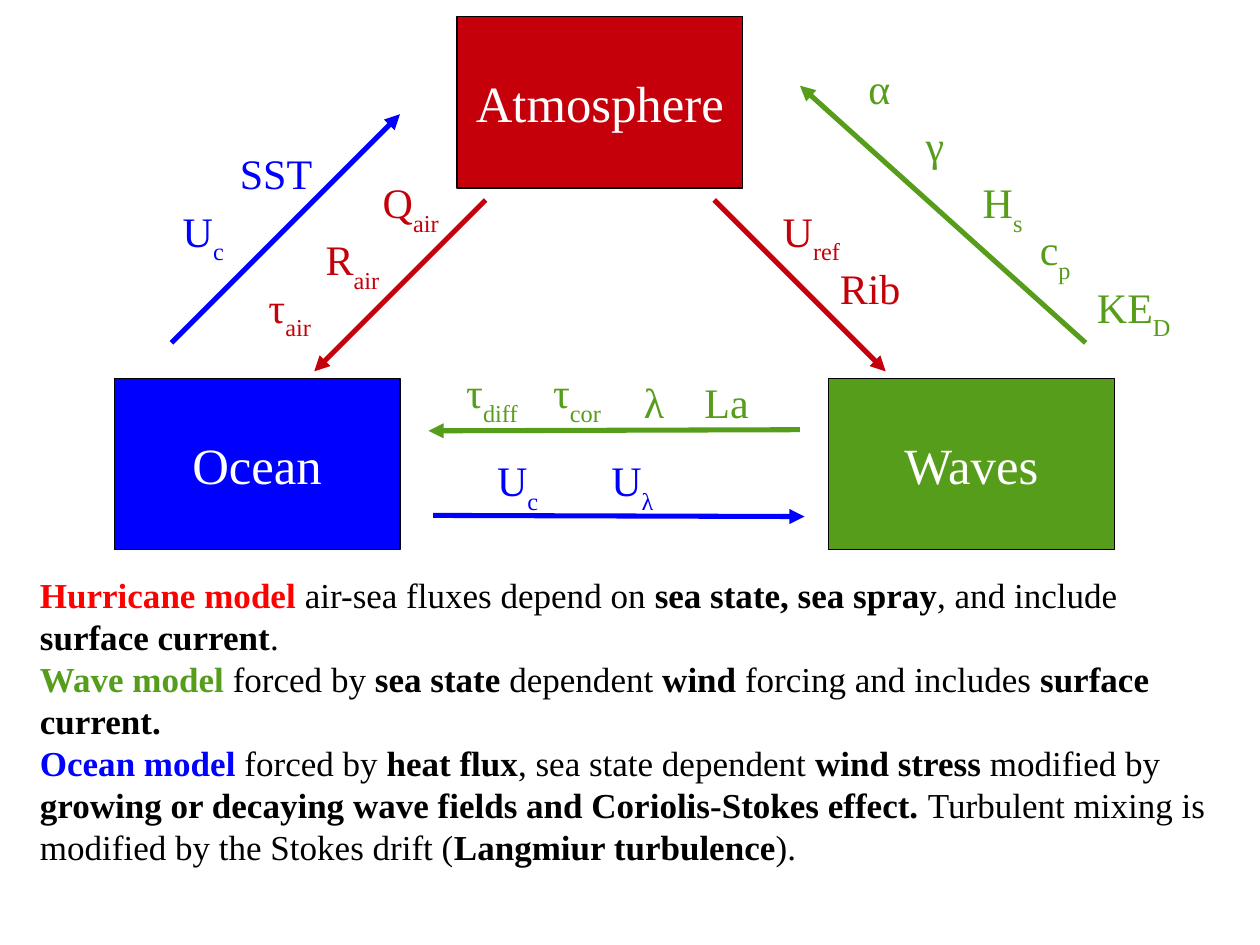
from lxml.etree import SubElement
from pptx import Presentation
from pptx.dml.color import RGBColor
from pptx.enum.shapes import MSO_CONNECTOR as Connector, MSO_SHAPE as Shape
from pptx.enum.text import MSO_ANCHOR as Anchor, PP_ALIGN as Align
from pptx.oxml.ns import qn
from pptx.util import Inches, Pt

UNIT = Inches(9.07) / 20
FONT = "Times New Roman"
BLACK = RGBColor(0x00, 0x00, 0x00)
WHITE = RGBColor(0xFF, 0xFF, 0xFF)
BRIGHT_RED = RGBColor(0xFF, 0x00, 0x00)
RED = RGBColor(0xC5, 0x00, 0x0B)
BLUE = RGBColor(0x00, 0x00, 0xFF)
GREEN = RGBColor(0x57, 0x9D, 0x1C)

MODELS = [
    ("Atmosphere", RED, (8, 0.29, 5, 3)),
    ("Ocean", BLUE, (2, 6.62, 5, 3)),
    ("Waves", GREEN, (14.5, 6.62, 5, 3)),
]

# Box in grid units, arrow ends as shares of the box, labels as (text, subscript, column, row).
EXCHANGES = [
    (BLUE, (3, 2, 4, 4), (0, 1), (1, 0),
     [("SST", "", 1, 0.5), ("U", "c", 0, 1.5)]),
    (RED, (5.5, 3.5, 3, 3), (1, 0), (0, 1),
     [("Q", "air", 1, -0.5), ("R", "air", 0, 0.5), ("τ", "air", -1, 1.33)]),
    (RED, (12.5, 3.5, 3, 3), (0, 0), (1, 1),
     [("U", "ref", 1, 0), ("Rib", "", 2, 1)]),
    (GREEN, (14, 1.5, 5, 4.5), (1, 1), (0, 0),
     [("α", "", 1, -0.5), ("γ", "", 2, 0.5), ("H", "s", 3, 1.5),
      ("c", "p", 4, 2.33), ("KE", "D", 5, 3.33)]),
    (GREEN, (7.5, 7.52, 6.5, 0.02), (1, 0), (0, 1),
     [("τ", "diff", 0.46, -1.19), ("τ", "cor", 1.98, -1.19),
      ("λ", "", 3.57, -1.02), ("La", "", 4.63, -1.02)]),
    (BLUE, (7.58, 9.02, 6.5, 0.02), (0, 0), (1, 1),
     [("U", "c", 0.92, -1.15), ("U", "λ", 2.92, -1.15)]),
]

SUMMARY = [
    ("Hurricane model ", BRIGHT_RED,
     [("air-sea fluxes depend on ", False), ("sea state, sea spray", True),
      (", and include ", False), ("surface current", True), (".", False)]),
    ("Wave model ", GREEN,
     [("forced by ", False), ("sea state", True), (" dependent ", False),
      ("wind", True), (" forcing and includes ", False),
      ("surface current.", True)]),
    ("Ocean model ", BLUE,
     [("forced by ", False), ("heat flux", True),
      (", sea state dependent ", False), ("wind stress", True),
      (" modified by ", False),
      ("growing or decaying wave fields and Coriolis-Stokes effect. ", True),
      ("Turbulent mixing is modified by the Stokes drift (", False),
      ("Langmiur turbulence", True), (").", False)]),
]


def grid(*lengths):
    return [round(length * UNIT) for length in lengths]


def write(paragraph, text, size=24, color=BLACK, bold=False, subscript=False):
    run = paragraph.add_run()
    run.text = text
    run.font.name = FONT
    run.font.size = Pt(size)
    run.font.color.rgb = color
    run.font.bold = bold
    if subscript:
        run._r.get_or_add_rPr().set("baseline", "-33000")


def set_frame(shape):
    frame = shape.text_frame
    frame.word_wrap = True
    frame.margin_left = frame.margin_right = Inches(0.09)
    frame.margin_top = frame.margin_bottom = Inches(0.04)
    return frame


def add_model(slide, box, name, color):
    shape = slide.shapes.add_shape(Shape.ROUNDED_RECTANGLE, *grid(*box))
    shape.adjustments[0] = 0
    shape.shadow.inherit = False
    shape.fill.solid()
    shape.fill.fore_color.rgb = color
    shape.line.color.rgb = BLACK
    shape.line.width = Pt(0.75)
    frame = set_frame(shape)
    frame.vertical_anchor = Anchor.MIDDLE
    paragraph = frame.paragraphs[0]
    paragraph.alignment = Align.CENTER
    write(paragraph, name, size=29, color=WHITE)


def add_arrow(slide, start, end, color):
    arrow = slide.shapes.add_connector(Connector.STRAIGHT, *grid(*start, *end))
    arrow.line.color.rgb = color
    arrow.line.width = Pt(2.89)
    SubElement(arrow.line._get_or_add_ln(), qn("a:tailEnd"), type="triangle")
    SubElement(arrow._element.spPr, qn("a:effectLst"))


def add_exchange(slide, box, color, start, end, labels):
    left, top, width, height = box
    ends = [(left + x * width, top + y * height) for x, y in (start, end)]
    add_arrow(slide, *ends, color)
    for symbol, subscript, column, row in labels:
        label_height = 1.17 if subscript else 1.02
        label = slide.shapes.add_textbox(
            *grid(left + column, top + row, 2, label_height))
        paragraph = set_frame(label).paragraphs[0]
        write(paragraph, symbol, color=color)
        if subscript:
            write(paragraph, subscript, color=color, subscript=True)


def add_summary(slide, box):
    frame = set_frame(slide.shapes.add_textbox(*grid(*box)))
    for index, (model, color, phrases) in enumerate(SUMMARY):
        paragraph = frame.add_paragraph() if index else frame.paragraphs[0]
        write(paragraph, model, size=20, color=color, bold=True)
        for phrase, bold in phrases:
            write(paragraph, phrase, size=20, bold=bold)


def main():
    presentation = Presentation()
    presentation.slide_width = Inches(10)
    presentation.slide_height = Inches(7.5)
    slide = presentation.slides.add_slide(presentation.slide_layouts[6])
    for name, color, box in MODELS:
        add_model(slide, box, name, color)
    for color, box, start, end, labels in EXCHANGES:
        add_exchange(slide, box, color, start, end, labels)
    add_summary(slide, (0.5, 9.95, 21.3, 5.78))
    presentation.save("out.pptx")


if __name__ == "__main__":
    main()
